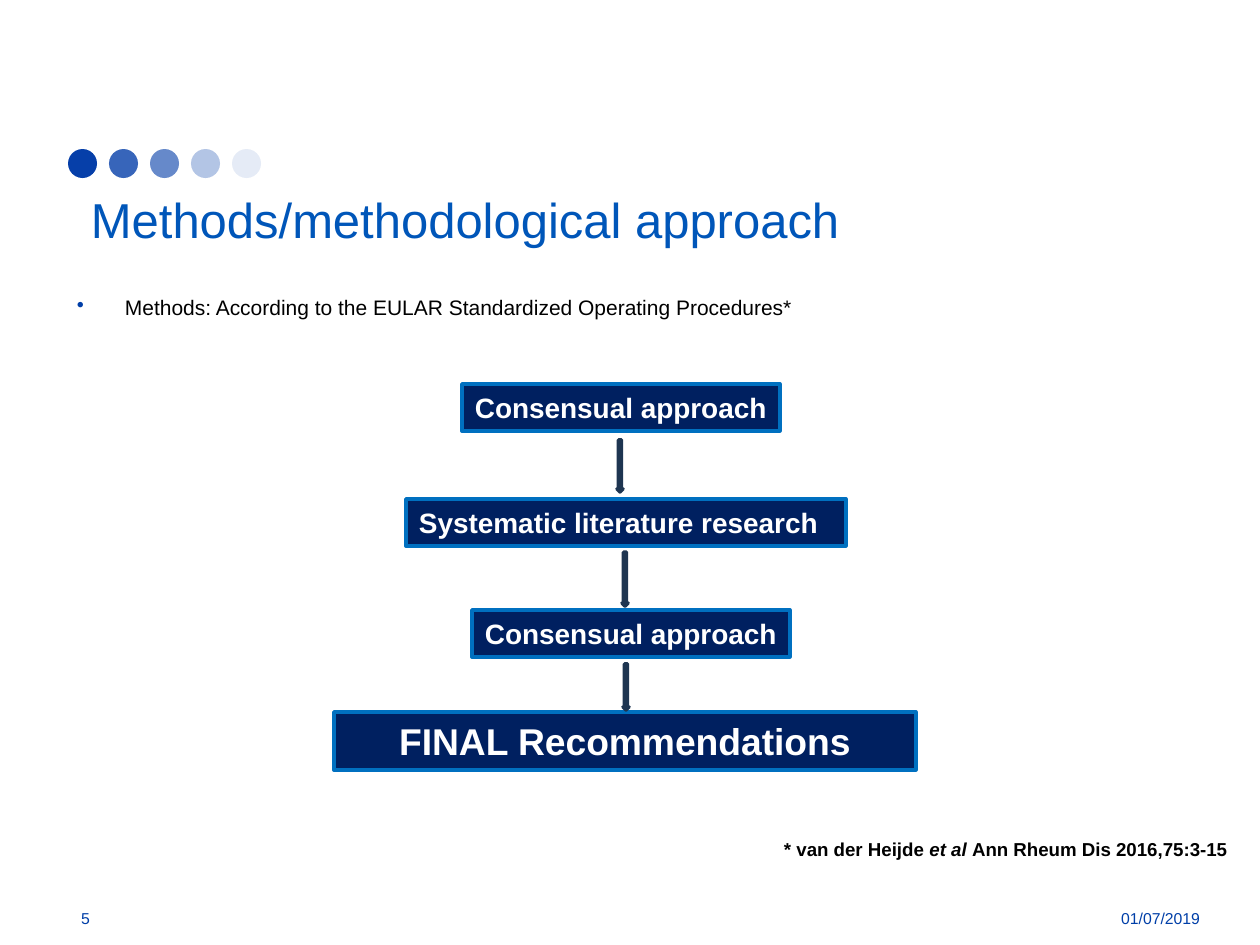
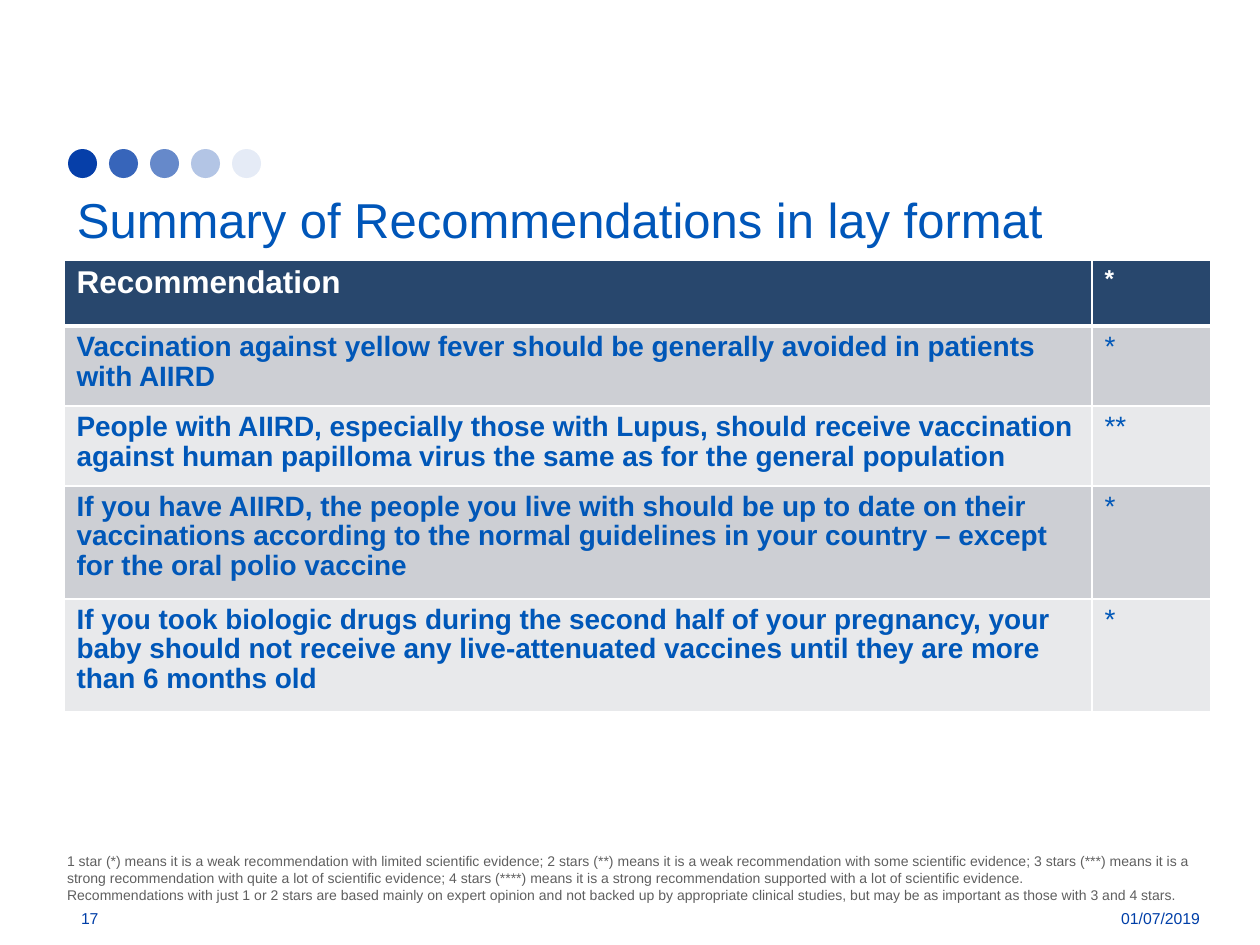
"""Build two slides on the methods and the lay summary of vaccination recommendations."""
from dataclasses import dataclass
from typing import Any, NamedTuple

from lxml import etree
from pptx import Presentation
from pptx.dml.color import RGBColor
from pptx.enum.shapes import MSO_SHAPE
from pptx.enum.text import MSO_ANCHOR, MSO_AUTO_SIZE, PP_ALIGN
from pptx.oxml.ns import qn
from pptx.util import Emu, Pt

ELLIPSE, RECTANGLE, DOWN_ARROW = MSO_SHAPE.OVAL, MSO_SHAPE.RECTANGLE, MSO_SHAPE.DOWN_ARROW
LEFT, CENTER, RIGHT = PP_ALIGN.LEFT, PP_ALIGN.CENTER, PP_ALIGN.RIGHT
TOP, MIDDLE = MSO_ANCHOR.TOP, MSO_ANCHOR.MIDDLE
NO_AUTOSIZE = MSO_AUTO_SIZE.NONE

PX_PER_INCH = 126
EMU_PER_INCH = 914400
TITLE_ONLY = 5
FONT = "Arial"

WHITE, BLACK, GREY = "FFFFFF", "000000", "5F5F5F"
DOT_BLUE, TITLE_BLUE, FOOTER_BLUE, TABLE_BLUE = "063FA9", "0056B9", "003FA8", "0057B8"
BOX_NAVY, BOX_EDGE = "002060", "0070C0"
SLATE, SLATE_EDGE = "28476D", "1E3551"
BAND_COLORS = ("CDCFD4", "E8E9EB")

DOT_ALPHAS = (100, 80, 61, 30, 10)
DOT_LEFT, DOT_TOP, DOT_SIZE, DOT_PITCH = 68, 149, 29, 41
INSET_X, INSET_Y = 13, 6
BULLET_INDENT = 48
DATE = "01/07/2019"

COLUMN_WIDTHS = (1028, 119)
ROW_HEIGHTS = (66, 80, 80, 113, 113)
TABLE_LEFT, TABLE_TOP = 64, 260
TABLE_LINE_SPACING = 0.96
THIN, THICK = 1, 3


class Box(NamedTuple):
    """Position and size in px."""

    left: int
    top: int
    width: int
    height: int


@dataclass(frozen=True)
class TextStyle:
    """Look of a run of text and its paragraph."""

    size: float
    color: str
    bold: bool = False
    italic: bool = False
    align: Any = LEFT


@dataclass(frozen=True)
class FlowStep:
    """One box of the flow chart."""

    text: str
    box: Box
    style: TextStyle


@dataclass(frozen=True)
class Recommendation:
    """One row of the table."""

    text: str
    stars: str


TITLE_STYLE = TextStyle(28, TITLE_BLUE)
FOOTER_STYLE = TextStyle(9, FOOTER_BLUE)
DATE_STYLE = TextStyle(9, FOOTER_BLUE, align=RIGHT)
BODY_STYLE = TextStyle(12, BLACK)
STEP_STYLE = TextStyle(16, WHITE, bold=True)
FINAL_STYLE = TextStyle(21.3, WHITE, bold=True, align=CENTER)
CITATION_STYLE = TextStyle(10.7, BLACK, bold=True)
CITATION_ITALIC = TextStyle(10.7, BLACK, bold=True, italic=True)
NOTE_STYLE = TextStyle(8, GREY)
HEADER_STYLES = (TextStyle(18, WHITE, bold=True), TextStyle(14, WHITE, bold=True))
ROW_STYLES = (TextStyle(16, TABLE_BLUE, bold=True), TextStyle(16, TABLE_BLUE))

TITLE_BOX = Box(64, 179, 1148, 87)
NUMBER_BOX = Box(68, 893, 121, 50)
DATE_BOX = Box(1044, 893, 169, 50)
BODY_BOX = Box(64, 289, 1148, 568)
CITATION_BOX = Box(771, 832, 474, 35)
NOTE_BOX = Box(54, 847, 1152, 63)

STEPS = (
    FlowStep("Consensual approach", Box(462, 384, 318, 47), STEP_STYLE),
    FlowStep("Systematic literature research", Box(406, 499, 440, 47), STEP_STYLE),
    FlowStep("Consensual approach", Box(472, 610, 318, 47), STEP_STYLE),
    FlowStep("FINAL Recommendations", Box(334, 712, 582, 58), FINAL_STYLE),
)
ARROWS = (Box(617, 440, 6, 52), Box(622, 552, 6, 54), Box(623, 664, 6, 46))

CITATION = (
    ("* van der Heijde ", CITATION_STYLE),
    ("et al ", CITATION_ITALIC),
    ("Ann Rheum Dis 2016,75:3-15", CITATION_STYLE),
)
HEADER = Recommendation("Recommendation", "*")
RECOMMENDATIONS = (
    Recommendation("Vaccination against yellow fever should be generally avoided in patients "
                   "with AIIRD", "*"),
    Recommendation("People with AIIRD, especially those with Lupus, should receive vaccination "
                   "against human papilloma virus the same as for the general population", "**"),
    Recommendation("If you have AIIRD, the people you live with should be up to date on their "
                   "vaccinations according to the normal guidelines in your country – except "
                   "for the oral polio vaccine", "*"),
    Recommendation("If you took biologic drugs during the second half of your pregnancy, your "
                   "baby should not receive any live-attenuated vaccines until they are more "
                   "than 6 months old", "*"),
)
STAR_NOTES = (
    "1 star (*) means it is a weak recommendation with limited scientific evidence; "
    "2 stars (**) means it is a weak recommendation with some scientific evidence; "
    "3 stars (***) means it is a strong recommendation with quite a lot of scientific evidence; "
    "4 stars (****) means it is a strong recommendation supported with a lot of "
    "scientific evidence.",
    "Recommendations with just 1 or 2 stars are based mainly on expert opinion and not backed up "
    "by appropriate clinical studies, but may be as important as those with 3 and 4 stars.",
)


def px(length: int) -> Emu:
    """Turn px into EMU."""
    return Emu(round(length * EMU_PER_INCH / PX_PER_INCH))


def rgb(color: str) -> RGBColor:
    """Turn a hex string into a colour."""
    return RGBColor.from_string(color)


def set_attributes(target: Any, values: dict[str, Any]) -> None:
    """Set each named attribute of the target."""
    for name, value in values.items():
        setattr(target, name, value)


def place(box: Box) -> tuple[Emu, ...]:
    """Turn a px box into EMU lengths."""
    return tuple(px(length) for length in box)


def add_run(paragraph: Any, text: str, style: TextStyle) -> None:
    """Append a styled run."""
    run = paragraph.add_run()
    run.text = text
    set_attributes(run.font, {"name": FONT, "size": Pt(style.size),
                              "bold": style.bold, "italic": style.italic})
    run.font.color.rgb = rgb(style.color)


def write(frame: Any, texts: tuple[str, ...], style: TextStyle) -> None:
    """Write one paragraph per text."""
    for index, text in enumerate(texts):
        paragraph = frame.add_paragraph() if index else frame.paragraphs[0]
        paragraph.alignment = style.align
        add_run(paragraph, text, style)


def format_frame(frame: Any, anchor: Any, left: int = INSET_X, right: int = INSET_X) -> None:
    """Set wrapping, anchor and insets."""
    set_attributes(frame, {
        "word_wrap": True, "auto_size": NO_AUTOSIZE, "vertical_anchor": anchor,
        "margin_left": px(left), "margin_right": px(right),
        "margin_top": px(INSET_Y), "margin_bottom": px(INSET_Y),
    })


def add_text(slide: Any, box: Box, texts: tuple[str, ...], style: TextStyle,
             anchor: Any = TOP, right: int = INSET_X) -> Any:
    """Add a text box and return its frame."""
    frame = slide.shapes.add_textbox(*place(box)).text_frame
    format_frame(frame, anchor, right=right)
    write(frame, texts, style)
    return frame


def add_figure(slide: Any, kind: Any, box: Box, fill: str, edge: str = "") -> Any:
    """Add a filled preset shape with an optional edge."""
    shape = slide.shapes.add_shape(kind, *place(box))
    shape.shadow.inherit = False
    shape.fill.solid()
    shape.fill.fore_color.rgb = rgb(fill)
    if edge:
        shape.line.color.rgb = rgb(edge)
        shape.line.width = Pt(2)
    else:
        shape.line.fill.background()
    return shape


def add_dots(slide: Any) -> None:
    """Draw the row of fading dots."""
    for index, alpha in enumerate(DOT_ALPHAS):
        box = Box(DOT_LEFT + index * DOT_PITCH, DOT_TOP, DOT_SIZE, DOT_SIZE)
        dot = add_figure(slide, ELLIPSE, box, DOT_BLUE)
        color = dot.element.spPr.find(qn("a:solidFill"))[0]
        etree.SubElement(color, qn("a:alpha")).set("val", str(alpha * 1000))


def start_slide(presentation: Any, title: str, number: int, title_indent: int = 0) -> Any:
    """Add a slide with dots, title and footer."""
    slide = presentation.slides.add_slide(presentation.slide_layouts[TITLE_ONLY])
    add_dots(slide)
    shape = slide.shapes.title
    set_attributes(shape, dict(zip(("left", "top", "width", "height"), place(TITLE_BOX))))
    format_frame(shape.text_frame, MIDDLE, left=INSET_X + title_indent)
    write(shape.text_frame, (title,), TITLE_STYLE)
    shape.text_frame.paragraphs[0].line_spacing = 0.9
    add_text(slide, NUMBER_BOX, (str(number),), FOOTER_STYLE, MIDDLE)
    add_text(slide, DATE_BOX, (DATE,), DATE_STYLE, MIDDLE)
    return slide


def add_bullet(paragraph: Any, color: str) -> None:
    """Give a paragraph a coloured hanging bullet."""
    properties = paragraph._p.get_or_add_pPr()
    properties.set("marL", str(px(BULLET_INDENT)))
    properties.set("indent", str(-px(BULLET_INDENT)))
    bullet_color = etree.SubElement(properties, qn("a:buClr"))
    etree.SubElement(bullet_color, qn("a:srgbClr")).set("val", color)
    etree.SubElement(properties, qn("a:buChar")).set("char", "•")


def add_border(cell: Any, side: str, width: int) -> None:
    """Draw one white cell border."""
    line = etree.SubElement(cell._tc.get_or_add_tcPr(), qn(f"a:{side}"))
    line.set("w", str(Pt(width)))
    fill = etree.SubElement(line, qn("a:solidFill"))
    etree.SubElement(fill, qn("a:srgbClr")).set("val", WHITE)


def format_cell(cell: Any, text: str, style: TextStyle, fill: str, row: int) -> None:
    """Fill, border and write one table cell."""
    widths = {"lnL": THIN, "lnR": THIN,
              "lnT": THICK if row == 1 else THIN, "lnB": THICK if row == 0 else THIN}
    for side, width in widths.items():
        add_border(cell, side, width)
    cell.fill.solid()
    cell.fill.fore_color.rgb = rgb(fill)
    write(cell.text_frame, (text,), style)
    cell.text_frame.paragraphs[0].line_spacing = TABLE_LINE_SPACING


def add_recommendation_table(slide: Any) -> None:
    """Draw the table of recommendations."""
    box = Box(TABLE_LEFT, TABLE_TOP, sum(COLUMN_WIDTHS), sum(ROW_HEIGHTS))
    table = slide.shapes.add_table(len(ROW_HEIGHTS), len(COLUMN_WIDTHS), *place(box)).table
    for column, width in zip(table.columns, COLUMN_WIDTHS):
        column.width = px(width)
    for row, entry in enumerate((HEADER, *RECOMMENDATIONS)):
        table.rows[row].height = px(ROW_HEIGHTS[row])
        styles = ROW_STYLES if row else HEADER_STYLES
        fill = BAND_COLORS[(row - 1) % 2] if row else SLATE
        for column, text in enumerate((entry.text, entry.stars)):
            format_cell(table.cell(row, column), text, styles[column], fill, row)


def build_methods(presentation: Any) -> None:
    """Build the slide with the flow chart."""
    slide = start_slide(presentation, "Methods/methodological approach", 5, title_indent=14)
    body = add_text(slide, BODY_BOX, (), BODY_STYLE)
    add_bullet(body.paragraphs[0], FOOTER_BLUE)
    write(body, ("Methods: According to the EULAR Standardized Operating Procedures*",), BODY_STYLE)
    for step in STEPS:
        frame = add_figure(slide, RECTANGLE, step.box, BOX_NAVY, BOX_EDGE).text_frame
        format_frame(frame, MIDDLE, right=INSET_X if step.style.align == CENTER else 0)
        write(frame, (step.text,), step.style)
    for arrow in ARROWS:
        add_figure(slide, DOWN_ARROW, arrow, SLATE, SLATE_EDGE)
    citation = add_text(slide, CITATION_BOX, (), CITATION_STYLE, right=0)
    for text, style in CITATION:
        add_run(citation.paragraphs[0], text, style)


def build_summary(presentation: Any) -> None:
    """Build the slide with the table."""
    slide = start_slide(presentation, "Summary of Recommendations in lay format", 17)
    add_recommendation_table(slide)
    add_text(slide, NOTE_BOX, STAR_NOTES, NOTE_STYLE)


def main() -> None:
    """Build and save the presentation."""
    presentation = Presentation()
    set_attributes(presentation, {"slide_width": px(1260), "slide_height": px(945)})
    build_methods(presentation)
    build_summary(presentation)
    presentation.save("out.pptx")


if __name__ == "__main__":
    main()
